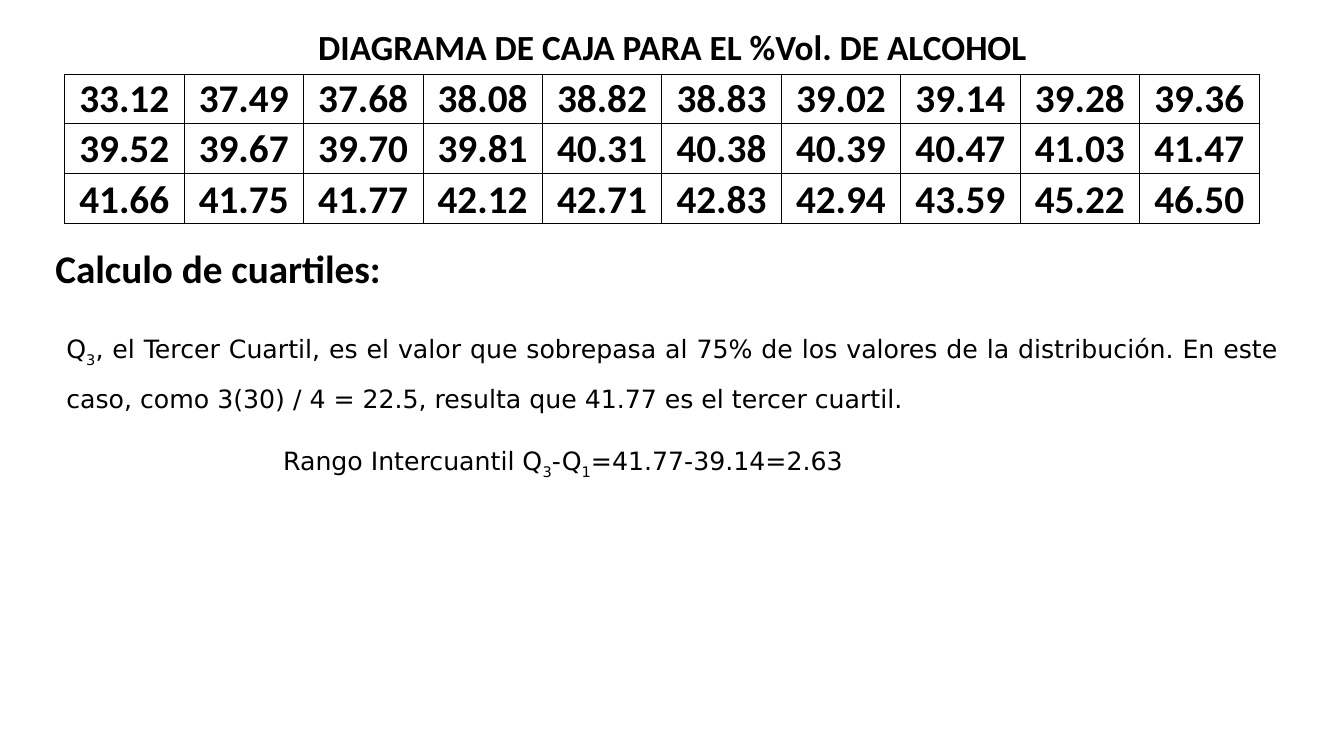
import pptx
import pptx.util
import pptx.dml.color
import pptx.enum.text
from lxml import etree

Inches = pptx.util.Inches
Pt = pptx.util.Pt
Align = pptx.enum.text.PP_ALIGN
Anchor = pptx.enum.text.MSO_ANCHOR
Fit = pptx.enum.text.MSO_AUTO_SIZE
NS = "http://schemas.openxmlformats.org/drawingml/2006/main"
COLORS = {"ink": "000000", "paper": "FFFFFF"}


def assign(obj, values):
    for name, value in values.items():
        setattr(obj, name, value)


class Deck:
    head = {"name": "Calibri", "size": Pt(28), "bold": True}
    title = {**head, "size": Pt(25.2)}
    body = {"name": "DejaVu Sans", "size": Pt(18), "bold": False}

    def __init__(self):
        self.prs = pptx.Presentation()
        assign(self.prs, {"slide_width": Inches(13.33), "slide_height": Inches(7.5)})
        self.slide = self.prs.slides.add_slide(self.prs.slide_layouts[6])
        fill = self.slide.background.fill
        fill.solid()
        fill.fore_color.rgb = pptx.dml.color.RGBColor.from_string(COLORS["paper"])

    def words(self, para, parts, font, form):
        """Every second part is set as a subscript."""
        assign(para, form)
        for i, part in enumerate(parts):
            run = para.add_run()
            run.text = part
            assign(run.font, font)
            run.font.color.rgb = pptx.dml.color.RGBColor.from_string(COLORS["ink"])
            if i % 2:
                run.font._element.set("baseline", "-25000")

    def text(self, box, parts, font, form, frame):
        shape = self.slide.shapes.add_textbox(*map(Inches, box))
        assign(shape.text_frame, {"word_wrap": True, **frame})
        self.words(shape.text_frame.paragraphs[0], parts, font, form)

    def border(self, cell):
        props = cell._tc.get_or_add_tcPr()
        for i, side in enumerate(("lnL", "lnR", "lnT", "lnB")):
            line = etree.Element(f"{{{NS}}}{side}", w=str(Pt(0.5)))
            fill = etree.SubElement(line, f"{{{NS}}}solidFill")
            etree.SubElement(fill, f"{{{NS}}}srgbClr", val=COLORS["ink"])
            props.insert(i, line)

    def table(self, box, rows, heights):
        frame = self.slide.shapes.add_table(len(rows), len(rows[0]), *map(Inches, box))
        table = frame.table
        assign(table, {"first_row": False, "horz_banding": False})
        for row, height in zip(table.rows, heights):
            row.height = Inches(height)
        edge = Inches(0.01)
        form = {"margin_left": edge, "margin_right": edge, "margin_top": edge,
                "margin_bottom": 0, "vertical_anchor": Anchor.BOTTOM}
        for r, row in enumerate(rows):
            for c, value in enumerate(row):
                cell = table.cell(r, c)
                assign(cell, form)
                cell.fill.background()
                self.border(cell)
                self.words(cell.text_frame.paragraphs[0], [value], self.head,
                           {"alignment": Align.CENTER})


def main():
    deck = Deck()
    grow = {"auto_size": Fit.SHAPE_TO_FIT_TEXT}
    just = {"alignment": Align.JUSTIFY, "space_after": Pt(10)}
    loose = {**just, "line_spacing": 1.5}

    # Title
    deck.text((1.2, 0.24, 10.94, 0.5), ["DIAGRAMA DE CAJA PARA EL %Vol. DE ALCOHOL"],
              deck.title, {"alignment": Align.CENTER, "line_spacing": 0.9},
              {"vertical_anchor": Anchor.MIDDLE})

    # Sorted values
    rows = [line.split() for line in (
        "33.12 37.49 37.68 38.08 38.82 38.83 39.02 39.14 39.28 39.36",
        "39.52 39.67 39.70 39.81 40.31 40.38 40.39 40.47 41.03 41.47",
        "41.66 41.75 41.77 42.12 42.71 42.83 42.94 43.59 45.22 46.50")]
    deck.table((0.64, 0.74, 11.85, 1.48), rows, (0.48, 0.5, 0.5))

    # Quartiles
    deck.text((0.45, 2.37, 12.82, 0.57), ["Calculo de cuartiles:"], deck.head, just, grow)
    deck.text((0.56, 3.09, 12.22, 0.96),
              ["Q", "3", ", el Tercer Cuartil, es el valor que sobrepasa al 75% de los "
               "valores de la distribución. En este caso, como 3(30) / 4 = 22.5, "
               "resulta que 41.77 es el tercer cuartil."], deck.body, loose, grow)
    deck.text((2.71, 4.2, 6.79, 0.51),
              ["Rango Intercuantil Q", "3", "-Q", "1", "=41.77-39.14=2.63"],
              deck.body, loose, grow)

    deck.prs.save("out.pptx")


if __name__ == "__main__":
    main()
